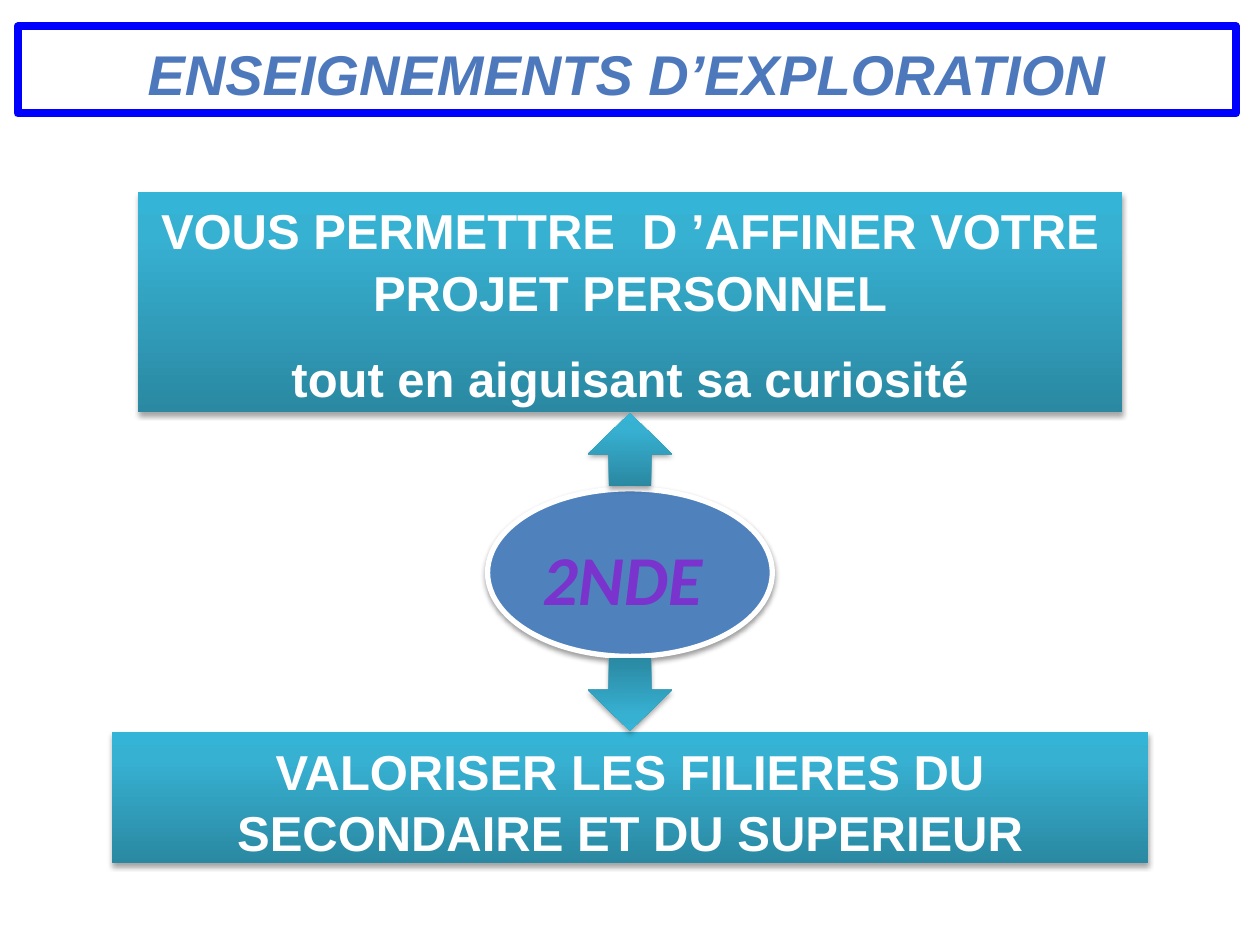
from dataclasses import dataclass

from lxml.etree import SubElement
from pptx import Presentation
from pptx.dml.color import RGBColor
from pptx.enum.shapes import MSO_SHAPE
from pptx.enum.text import MSO_ANCHOR, PP_ALIGN
from pptx.oxml import parse_xml
from pptx.oxml.ns import nsdecls, qn
from pptx.util import Inches, Pt


@dataclass(frozen=True)
class Theme:
    teal_stops: tuple = ((0, "2A88A2"), (80, "37B1D2"), (100, "34B4D6"))
    blue: str = "4F81BD"
    title_blue: str = "4D79BC"
    border: str = "0000FF"
    violet: str = "7A33CC"
    white: str = "FFFFFF"
    font: str = "Arial"
    level_font: str = "Calibri"
    title_size: int = 32
    goal_size: int = 28
    level_size: int = 40


THEME = Theme()
CENTER = 5


def add_panel(slide, preset, left, top, width, height):
    panel = slide.shapes.add_shape(
        preset, Inches(left), Inches(top), Inches(width), Inches(height)
    )
    panel.shadow.inherit = False
    panel.fill.background()
    panel.line.fill.background()
    panel.text_frame.word_wrap = True
    return panel


def add_centered_panel(slide, preset, top, width, height):
    return add_panel(slide, preset, CENTER - width / 2, top, width, height)


def outline(panel, color, width):
    panel.line.color.rgb = RGBColor.from_string(color)
    panel.line.width = Pt(width)


def fill_teal(panel):
    panel.fill.gradient()
    panel.fill.gradient_angle = 90
    stops = panel.element.spPr.find(qn("a:gradFill")).find(qn("a:gsLst"))
    for stop in list(stops):
        stops.remove(stop)
    for position, color in THEME.teal_stops:
        stop = SubElement(stops, qn("a:gs"), pos=str(position * 1000))
        SubElement(stop, qn("a:srgbClr"), val=color)


def cast_shadow(panel, opacity, distance):
    effects = panel.element.spPr.find(qn("a:effectLst"))
    effects.append(parse_xml(
        f'<a:outerShdw {nsdecls("a")} blurRad="{Pt(3.1)}" dist="{Pt(distance)}" '
        'dir="5400000" rotWithShape="0"><a:srgbClr val="000000">'
        f'<a:alpha val="{opacity * 1000}"/></a:srgbClr></a:outerShdw>'
    ))


def write(panel, lines, size, color, font=THEME.font, italic=False,
          anchor=MSO_ANCHOR.MIDDLE, line_spacing=1.0):
    frame = panel.text_frame
    frame.vertical_anchor = anchor
    for index, line in enumerate(lines):
        paragraph = frame.add_paragraph() if index else frame.paragraphs[0]
        paragraph.text = line
        paragraph.alignment = PP_ALIGN.CENTER
        paragraph.line_spacing = line_spacing
        if index:
            paragraph.space_before = Pt(size / 2)
        paragraph.font.name = font
        paragraph.font.size = Pt(size)
        paragraph.font.bold = True
        paragraph.font.italic = italic
        paragraph.font.color.rgb = RGBColor.from_string(color)


def add_goal(slide, top, width, height, lines):
    goal = add_centered_panel(slide, MSO_SHAPE.RECTANGLE, top, width, height)
    fill_teal(goal)
    cast_shadow(goal, 35, 1.8)
    write(goal, lines, THEME.goal_size, THEME.white,
          anchor=MSO_ANCHOR.TOP, line_spacing=1.05)


def add_level(slide):
    level = add_centered_panel(slide, MSO_SHAPE.OVAL, 3.88, 2.26, 1.33)
    level.fill.solid()
    level.fill.fore_color.rgb = RGBColor.from_string(THEME.blue)
    outline(level, THEME.white, 3)
    cast_shadow(level, 38, 1.6)
    level.text_frame.margin_top = Inches(0.12)
    level.text_frame.margin_right = Inches(0.22)
    write(level, ["2NDE"], THEME.level_size, THEME.violet,
          font=THEME.level_font, italic=True)


def add_title(slide):
    title = add_panel(slide, MSO_SHAPE.RECTANGLE, 0.14, 0.21, 9.67, 0.69)
    outline(title, THEME.border, 4.5)
    write(title, ["ENSEIGNEMENTS D’EXPLORATION"], THEME.title_size,
          THEME.title_blue, italic=True, anchor=MSO_ANCHOR.BOTTOM)


def add_arrow(slide, top, rotation):
    arrow = add_centered_panel(slide, MSO_SHAPE.UP_ARROW, top, 0.67, 0.58)
    arrow.adjustments[0] = 0.5
    arrow.adjustments[1] = 0.56
    arrow.rotation = rotation
    fill_teal(arrow)
    cast_shadow(arrow, 35, 1.8)


def main():
    presentation = Presentation()
    presentation.slide_width = Inches(10)
    presentation.slide_height = Inches(7.5)
    slide = presentation.slides.add_slide(presentation.slide_layouts[6])

    add_goal(slide, 5.81, 8.22, 1.04,
             ["VALORISER LES FILIERES DU SECONDAIRE ET DU SUPERIEUR"])
    add_goal(slide, 1.52, 7.81, 1.75,
             ["VOUS PERMETTRE  D ’AFFINER VOTRE PROJET PERSONNEL",
              "tout en aiguisant sa curiosité"])
    add_level(slide)
    add_title(slide)
    for top, rotation in ((3.28, 0), (5.22, 180)):
        add_arrow(slide, top, rotation)

    presentation.save("out.pptx")


if __name__ == "__main__":
    main()
